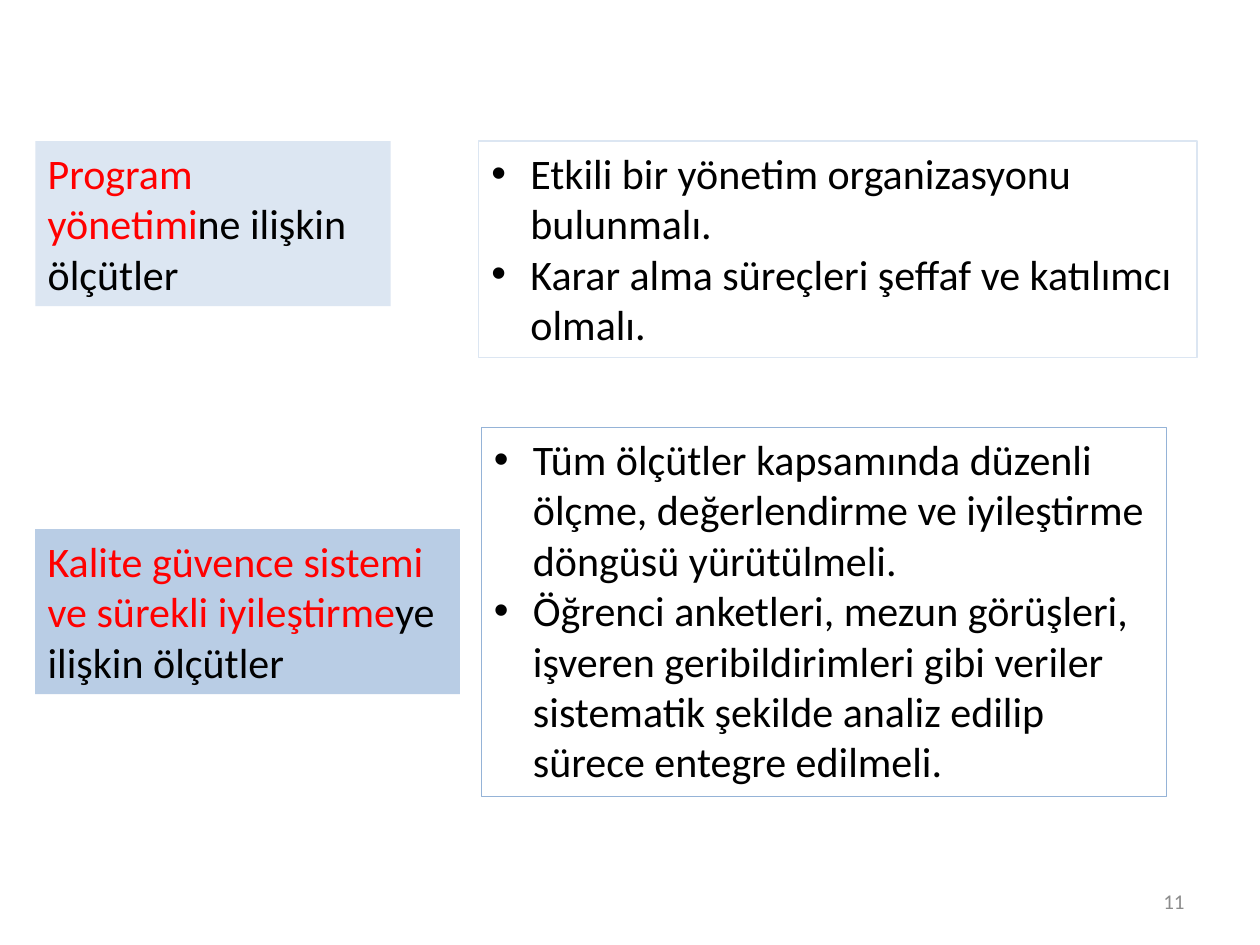
from dataclasses import dataclass

from pptx import Presentation
from pptx.dml.color import RGBColor
from pptx.enum.text import MSO_ANCHOR as Anchor, MSO_AUTO_SIZE as AutoSize, PP_ALIGN as Align
from pptx.util import Inches, Pt

SLIDE_WIDTH, SLIDE_HEIGHT = Inches(10), Inches(7.5)
TWO_CONTENT_LAYOUT = 3
LEFT_MARGIN = 2.8
LABEL_HEIGHT = 17.47
FIRST_ROW = 14.93
BULLET_INDENT = Inches(0.31)
RED, BLACK, GREY = "FF0000", "000000", "8C8C8C"
PALE_BLUE, LIGHT_BLUE, MID_BLUE = "DCE6F2", "B9CDE5", "95B3D7"


@dataclass(frozen=True)
class Area:
    """Percentages of the slide's width and height."""
    left: float
    top: float
    width: float
    height: float

    def lengths(self) -> dict:
        return {
            "left": int(SLIDE_WIDTH * self.left / 100),
            "top": int(SLIDE_HEIGHT * self.top / 100),
            "width": int(SLIDE_WIDTH * self.width / 100),
            "height": int(SLIDE_HEIGHT * self.height / 100),
        }


@dataclass(frozen=True)
class Label:
    area: Area
    fill: str
    topic: str
    ending: str


@dataclass(frozen=True)
class Criteria:
    area: Area
    line: str
    items: tuple[str, ...]


LABELS = (
    Label(Area(LEFT_MARGIN, FIRST_ROW, 28.2, LABEL_HEIGHT), PALE_BLUE,
          "Program yönetimi", "ne ilişkin ölçütler"),
    Label(Area(LEFT_MARGIN, 56, 33.7, LABEL_HEIGHT), LIGHT_BLUE,
          "Kalite güvence sistemi ve sürekli iyileştirme", "ye ilişkin ölçütler"),
)
CRITERIA = (
    Criteria(Area(38, FIRST_ROW, 57, 22.93), PALE_BLUE, (
        "Etkili bir yönetim organizasyonu bulunmalı.",
        "Karar alma süreçleri şeffaf ve katılımcı olmalı.",
    )),
    Criteria(Area(38.2, 45.2, 54.4, 39.07), MID_BLUE, (
        "Tüm ölçütler kapsamında düzenli ölçme, değerlendirme ve iyileştirme "
        "döngüsü yürütülmeli.",
        "Öğrenci anketleri, mezun görüşleri, işveren geribildirimleri gibi veriler "
        "sistematik şekilde analiz edilip sürece entegre edilmeli.",
    )),
)


def color(value: str) -> RGBColor:
    return RGBColor.from_string(value)


def apply(target, values: dict) -> None:
    for name, value in values.items():
        setattr(target, name, value)


def add_run(paragraph, text: str, text_color: str, size: int = 24) -> None:
    run = paragraph.add_run()
    run.text = text
    apply(run.font, {"name": "Calibri", "size": Pt(size)})
    run.font.color.rgb = color(text_color)


def place(shape, area: Area, anchor=Anchor.TOP) -> None:
    apply(shape, area.lengths())
    apply(shape.text_frame, {
        "word_wrap": True, "auto_size": AutoSize.NONE, "vertical_anchor": anchor,
    })


def add_text_box(slide, area: Area, anchor=Anchor.TOP):
    shape = slide.shapes.add_textbox(**area.lengths())
    place(shape, area, anchor)
    return shape


def draw_label(slide, label: Label) -> None:
    shape = add_text_box(slide, label.area)
    shape.fill.solid()
    shape.fill.fore_color.rgb = color(label.fill)
    paragraph = shape.text_frame.paragraphs[0]
    add_run(paragraph, label.topic, RED)
    add_run(paragraph, label.ending, BLACK)


def fill_criteria(shape, criteria: Criteria) -> None:
    place(shape, criteria.area)
    shape.line.color.rgb = color(criteria.line)
    shape.line.width = Pt(0.75)
    frame = shape.text_frame
    for index, item in enumerate(criteria.items):
        paragraph = frame.add_paragraph() if index else frame.paragraphs[0]
        apply(paragraph, {"space_before": Pt(0), "space_after": Pt(0)})
        properties = paragraph._p.get_or_add_pPr()
        properties.set("marL", str(BULLET_INDENT))
        properties.set("indent", str(-BULLET_INDENT))
        add_run(paragraph, item, BLACK)


def draw_slide_number(slide, number: str) -> None:
    shape = add_text_box(slide, Area(71.7, 92.67, 23.3, 5.33), Anchor.MIDDLE)
    paragraph = shape.text_frame.paragraphs[0]
    paragraph.alignment = Align.RIGHT
    add_run(paragraph, number, GREY, size=12)


def main() -> None:
    presentation = Presentation()
    apply(presentation, {"slide_width": SLIDE_WIDTH, "slide_height": SLIDE_HEIGHT})
    slide = presentation.slides.add_slide(presentation.slide_layouts[TWO_CONTENT_LAYOUT])
    title, *bodies = slide.placeholders
    title.element.getparent().remove(title.element)
    for body, criteria in zip(bodies, CRITERIA):
        fill_criteria(body, criteria)
    for label in LABELS:
        draw_label(slide, label)
    draw_slide_number(slide, "11")
    presentation.save("out.pptx")


if __name__ == "__main__":
    main()
